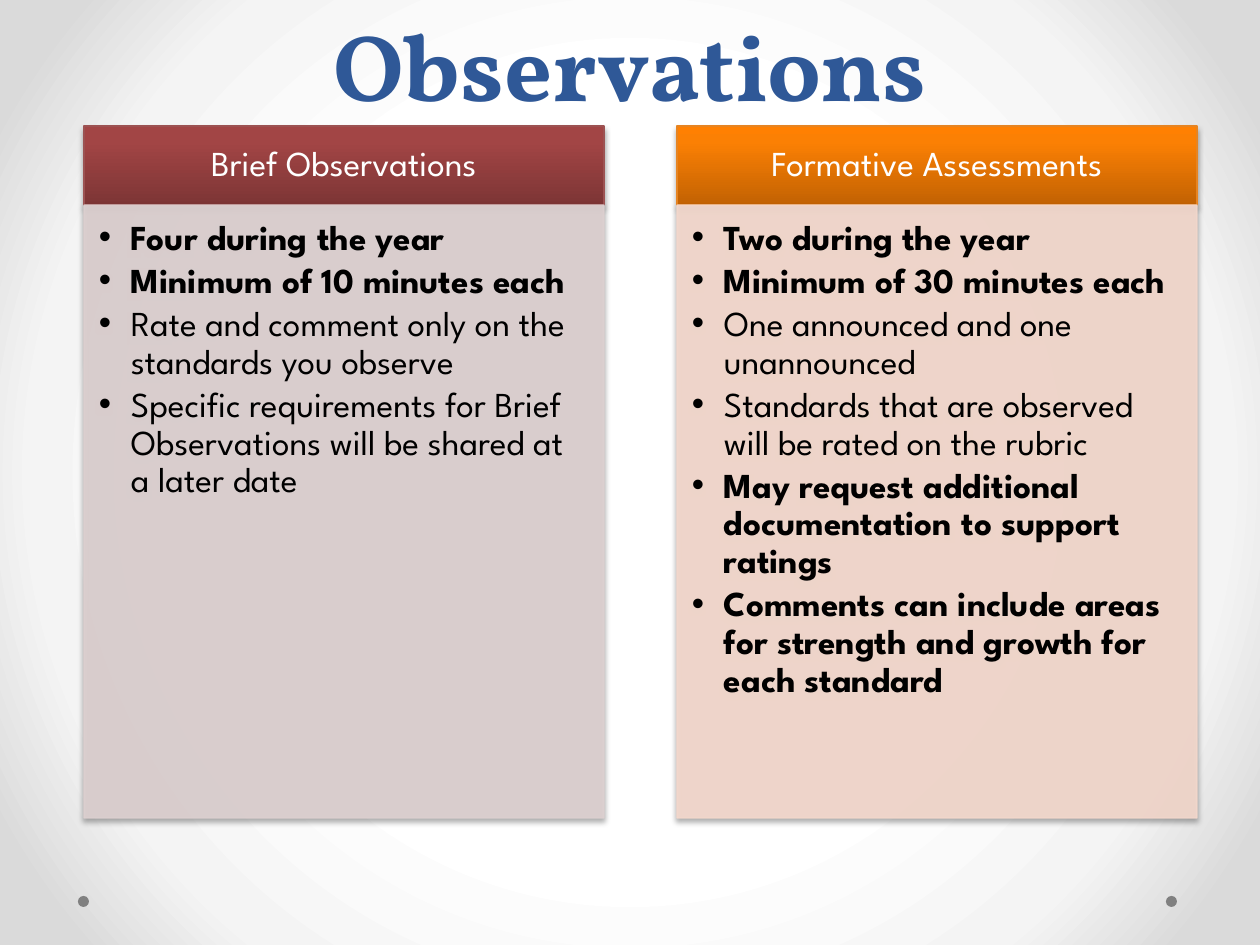
from dataclasses import dataclass
from pptx import Presentation
from pptx.dml.color import RGBColor as RGB
from pptx.enum.shapes import MSO_SHAPE as Kind
from pptx.enum.text import MSO_ANCHOR as Anchor, PP_ALIGN as Align
from pptx.oxml import parse_xml
from pptx.oxml.ns import nsdecls, qn
from pptx.util import Pt

SCALE = 914400 / 126


@dataclass(frozen=True)
class Theme:
    head_font: str = "Vollkorn"
    body_font: str = "League Spartan"
    title_size: int = 54
    body_size: int = 20
    title: str = "2F5897"
    white: str = "FFFFFF"
    black: str = "000000"
    dot: str = "808080"
    back: tuple = ((50, "FFFFFF"), (76, "F4F4F4"), (92, "DADADA"))


THEME = Theme()
COLUMNS = [
    dict(
        head="Brief Observations",
        stops=((0, "7D3535"), (80, "A24545"), (100, "A44343")),
        edge="9C5252",
        tint="DED1D1",
        items=[
            ("Four during the year", True),
            ("Minimum of 10 minutes each", True),
            ("Rate and comment only on the standards you observe", False),
            ("Specific requirements for Brief Observations will be shared "
             "at a later date", False),
        ],
    ),
    dict(
        head="Formative Assessments",
        stops=((0, "C26203"), (80, "FB8004"), (100, "FF8002")),
        edge="E68422",
        tint="F5D9CD",
        items=[
            ("Two during the year", True),
            ("Minimum of 30 minutes each", True),
            ("One announced and one unannounced", False),
            ("Standards that are observed will be rated on the rubric", False),
            ("May request additional documentation to support ratings", True),
            ("Comments can include areas for strength and growth for "
             "each standard", True),
        ],
    ),
]


def px(n):
    return round(n * SCALE)


def rgb(code):
    return RGB.from_string(code)


def blend(parent, stops, shade):
    """Swap the solid fill directly under parent for a gradient."""
    marks = "".join(
        f'<a:gs pos="{at * 1000}"><a:srgbClr val="{code}"/></a:gs>'
        for at, code in stops)
    grad = parse_xml(f'<a:gradFill {nsdecls("a")} rotWithShape="1">'
                     f'<a:gsLst>{marks}</a:gsLst>{shade}</a:gradFill>')
    parent.replace(parent.find(qn("a:solidFill")), grad)


def fade(shape, share):
    for clr in shape.element.spPr.iter(qn("a:srgbClr")):
        clr.append(parse_xml(
            f'<a:alpha {nsdecls("a")} val="{share * 1000}"/>'))


def shade(shape):
    """Add a soft shadow straight below the shape."""
    shape.element.spPr.find(qn("a:effectLst")).append(parse_xml(
        f'<a:outerShdw {nsdecls("a")} blurRad="{Pt(3.1)}" dist="{Pt(1.8)}" '
        'dir="5400000" rotWithShape="0"><a:srgbClr val="000000">'
        '<a:alpha val="35000"/></a:srgbClr></a:outerShdw>'))


def block(slide, kind, box, fill, edge=None):
    shape = slide.shapes.add_shape(kind, *map(px, box))
    shape.shadow.inherit = False
    shape.fill.solid()
    shape.fill.fore_color.rgb = rgb(fill)
    if edge:
        shape.line.color.rgb = rgb(edge)
        shape.line.width = Pt(0.75)
    else:
        shape.line.fill.background()
    return shape


def frame(shape, pads, anchor):
    text = shape.text_frame
    text.word_wrap = True
    text.vertical_anchor = anchor
    (text.margin_left, text.margin_top,
     text.margin_right, text.margin_bottom) = map(px, pads)
    return text


def style(para, face, size, color, bold=False):
    font = para.font
    font.name, font.size, font.bold = face, Pt(size), bold
    font.color.rgb = rgb(color)


def bullet(para):
    props = para._p.get_or_add_pPr()
    props.set("marL", str(px(32)))
    props.set("indent", str(-px(32)))
    props.append(parse_xml(f'<a:buFont {nsdecls("a")} typeface="Arial"/>'))
    props.append(parse_xml(f'<a:buChar {nsdecls("a")} char="•"/>'))


def title(slide, box, words):
    text = frame(slide.shapes.add_textbox(*map(px, box)),
                 (13, 6, 13, 6), Anchor.BOTTOM)
    para = text.paragraphs[0]
    para.text = words
    para.alignment = Align.CENTER
    para.line_spacing = Pt(58)
    style(para, THEME.head_font, THEME.title_size, THEME.title, True)


def header(slide, box, data):
    bar = block(slide, Kind.RECTANGLE, box, data["edge"], data["edge"])
    blend(bar.element.spPr, data["stops"],
          '<a:lin ang="16200000" scaled="0"/>')
    shade(bar)
    para = frame(bar, (20, 11, 20, 11), Anchor.MIDDLE).paragraphs[0]
    para.text = data["head"]
    para.alignment = Align.CENTER
    para.line_spacing = 0.9
    para.space_after = Pt(7)
    style(para, THEME.body_font, THEME.body_size, THEME.white)


def points(slide, box, data):
    panel = block(slide, Kind.RECTANGLE, box, data["tint"], data["tint"])
    fade(panel, 90)
    shade(panel)
    text = frame(panel, (15, 15, 20, 21), Anchor.TOP)
    for i, (words, bold) in enumerate(data["items"]):
        para = text.add_paragraph() if i else text.paragraphs[0]
        para.text = words
        para.alignment = Align.LEFT
        para.line_spacing = 0.9
        para.space_after = Pt(3)
        bullet(para)
        style(para, THEME.body_font, THEME.body_size, THEME.black, bold)


def column(slide, box, data):
    left, top, wide, high = box
    bar = 79
    header(slide, (left, top, wide, bar), data)
    points(slide, (left, top + bar, wide, high - bar), data)


def backdrop(slide):
    slide.background.fill.solid()
    blend(slide.element.find(".//" + qn("p:bgPr")), THEME.back,
          '<a:path path="circle"><a:fillToRect l="50000" t="50000" '
          'r="50000" b="50000"/></a:path>')
    for left in (1166, 78):
        block(slide, Kind.OVAL, (left, 896, 11, 11), THEME.dot)


def main():
    deck = Presentation()
    deck.slide_width, deck.slide_height = px(1260), px(945)
    slide = deck.slides.add_slide(deck.slide_layouts[6])
    backdrop(slide)
    title(slide, (63, 0, 1134, 126), "Observations")
    for i, data in enumerate(COLUMNS):
        column(slide, (84 + i * 593, 126, 520, 692), data)
    deck.save("out.pptx")


if __name__ == "__main__":
    main()
